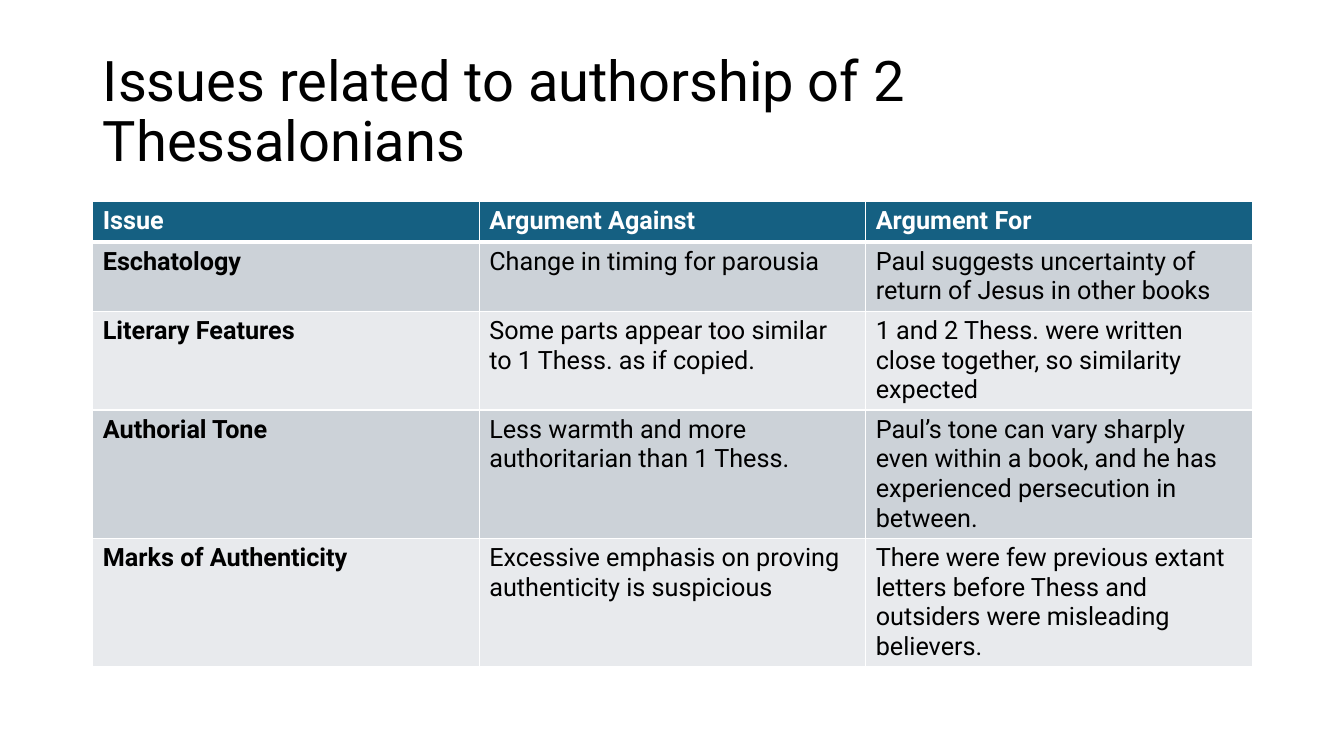
"""Build a slide with a table of the arguments about who wrote 2 Thessalonians."""
import pptx
import pptx.dml.color
import pptx.enum.text
import pptx.oxml.ns
import pptx.util
from lxml import etree

Inches = pptx.util.Inches
RGBColor = pptx.dml.color.RGBColor
BLACK = RGBColor(0x00, 0x00, 0x00)
WHITE = RGBColor(0xFF, 0xFF, 0xFF)
TEAL = RGBColor(0x15, 0x60, 0x82)
GRAY = RGBColor(0xCC, 0xD2, 0xD8)
PALE_GRAY = RGBColor(0xE8, 0xEA, 0xED)
FONT = "Roboto"

ARGUMENTS = [
    ("Issue", "Argument Against", "Argument For"),
    ("Eschatology", "Change in timing for parousia",
     "Paul suggests uncertainty of return of Jesus in other books"),
    ("Literary Features", "Some parts appear too similar to 1 Thess. as if copied.",
     "1 and 2 Thess. were written close together, so similarity expected"),
    ("Authorial Tone", "Less warmth and more authoritarian than 1 Thess.",
     "Paul’s tone can vary sharply even within a book, and he has experienced "
     "persecution in between."),
    ("Marks of Authenticity", "Excessive emphasis on proving authenticity is suspicious",
     "There were few previous extant letters before Thess and outsiders were "
     "misleading believers."),
]
ROW_HEIGHTS = [0.4, 0.68, 0.98, 1.27, 1.27]


def format_text(paragraph, size, color, bold):
    for run in paragraph.runs:
        run.font.name = FONT
        run.font.size = pptx.util.Pt(size)
        run.font.color.rgb = color
        run.font.bold = bold


def add_border(cell, side, points):
    qn = pptx.oxml.ns.qn
    line = etree.SubElement(cell._tc.get_or_add_tcPr(), qn(f"a:ln{side}"),
                            w=str(pptx.util.Pt(points)))
    fill = etree.SubElement(line, qn("a:solidFill"))
    etree.SubElement(fill, qn("a:srgbClr"), val=str(WHITE))


presentation = pptx.Presentation()
presentation.slide_width = Inches(13.33)
presentation.slide_height = Inches(7.5)
slide = presentation.slides.add_slide(presentation.slide_layouts[5])

title = slide.shapes.title
title.left, title.top = Inches(0.92), Inches(0.4)
title.width, title.height = Inches(11.5), Inches(1.45)
title.text_frame.text = "Issues related to authorship of 2 Thessalonians"
title.text_frame.word_wrap = True
title.text_frame.auto_size = pptx.enum.text.MSO_AUTO_SIZE.NONE
title.text_frame.vertical_anchor = pptx.enum.text.MSO_ANCHOR.MIDDLE
heading = title.text_frame.paragraphs[0]
heading.alignment = pptx.enum.text.PP_ALIGN.LEFT
heading.line_spacing = 0.9
format_text(heading, 40, BLACK, False)

issues = slide.shapes.add_table(
    len(ARGUMENTS), len(ARGUMENTS[0]),
    Inches(0.92), Inches(2), Inches(11.5), Inches(sum(ROW_HEIGHTS))).table

for row, (argument, height) in enumerate(zip(ARGUMENTS, ROW_HEIGHTS)):
    issues.rows[row].height = Inches(height)
    is_header = row == 0
    band = TEAL if is_header else (GRAY if row % 2 else PALE_GRAY)
    for column, wording in enumerate(argument):
        cell = issues.cell(row, column)
        for side in "LRTB":
            header_edge = (is_header and side == "B") or (row == 1 and side == "T")
            add_border(cell, side, 3 if header_edge else 1)
        cell.fill.solid()
        cell.fill.fore_color.rgb = band
        cell.text_frame.text = wording
        format_text(cell.text_frame.paragraphs[0], 18,
                    WHITE if is_header else BLACK, is_header or column == 0)

presentation.save("out.pptx")
